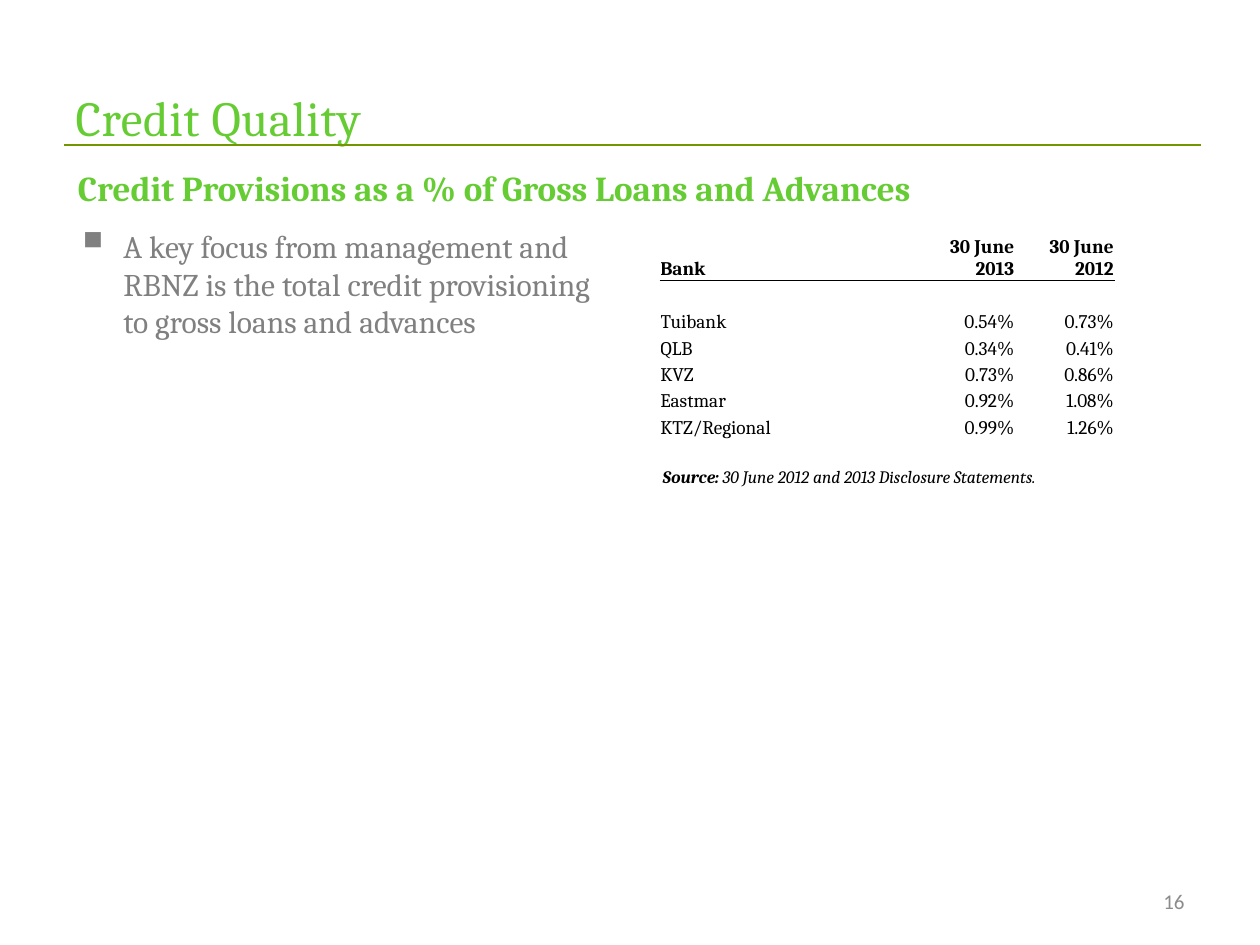
from lxml import etree
from pptx import Presentation
from pptx.dml.color import RGBColor
from pptx.enum import shapes, text
from pptx.oxml import ns, parse_xml
from pptx.util import Inches, Pt

GREEN = RGBColor(0x66, 0xCC, 0x33)
RULE_GREEN = RGBColor(0x73, 0x96, 0x00)
GREY = RGBColor(0x80, 0x80, 0x80)
NUMBER_GREY = RGBColor(0x8C, 0x8C, 0x8C)
BLACK = RGBColor(0, 0, 0)
LEFT, RIGHT = text.PP_ALIGN.LEFT, text.PP_ALIGN.RIGHT


def write(para, words, size=11, color=BLACK, font="Cambria", bold=False,
          italic=False, align=LEFT):
    """Append a formatted run to a paragraph and return it."""
    para.alignment = align
    span = para.add_run()
    span.text = words
    span.font.size = Pt(size)
    span.font.name = font
    span.font.color.rgb = color
    span.font.bold = bold
    span.font.italic = italic
    return span


def add_box(left, top, width, height, anchor=text.MSO_ANCHOR.TOP):
    """Add a wrapping text box and return its first paragraph."""
    frame = page.shapes.add_textbox(
        Inches(left), Inches(top), Inches(width), Inches(height)).text_frame
    frame.word_wrap = True
    frame.vertical_anchor = anchor
    return frame.paragraphs[0]


deck = Presentation()
deck.slide_width, deck.slide_height = Inches(10), Inches(7.5)
page = deck.slides.add_slide(deck.slide_layouts[5])

# Title and the rule beneath it
rule = page.shapes.add_connector(
    shapes.MSO_CONNECTOR.STRAIGHT,
    Inches(0.51), Inches(1.15), Inches(9.53), Inches(1.15))
rule.line.color.rgb = RULE_GREEN
rule.line.width = Pt(0.75)
etree.SubElement(rule._element.spPr, ns.qn("a:effectLst"))

title = page.shapes.title
title.left, title.top = Inches(0.5), Inches(0.3)
title.width, title.height = Inches(9), Inches(1.25)
title.text_frame.vertical_anchor = text.MSO_ANCHOR.MIDDLE
heading = write(title.text_frame.paragraphs[0], "Credit Quality", size=28, color=GREEN)
heading.font._element.set("spc", "40")

# Subtitle and key point
subtitle = add_box(0.52, 1.31, 8.19, 0.4)
subtitle.line_spacing = 0.9
write(subtitle, "Credit Provisions as a % of Gross Loans and Advances",
      size=20, color=GREEN, bold=True)

point = add_box(0.5, 1.75, 4.42, 4.95)
properties = point._p.get_or_add_pPr()
properties.set("marL", str(Inches(0.38)))
properties.set("indent", str(-Inches(0.38)))
bullet_color = etree.SubElement(properties, ns.qn("a:buClr"))
etree.SubElement(bullet_color, ns.qn("a:srgbClr"), val=str(GREY))
etree.SubElement(properties, ns.qn("a:buSzPct"), val="150000")
etree.SubElement(properties, ns.qn("a:buChar"), char="▪")
write(point, "A key focus from management and RBNZ is the total credit "
      "provisioning to gross loans and advances", size=18, color=GREY)

# Provisions table; the second row is an empty spacer
rows = [
    ("Bank", "30 June 2013", "30 June 2012"),
    ("", "", ""),
    ("Tuibank", "0.54%", "0.73%"),
    ("QLB", "0.34%", "0.41%"),
    ("KVZ", "0.73%", "0.86%"),
    ("Eastmar", "0.92%", "1.08%"),
    ("KTZ/Regional", "0.99%", "1.26%"),
]
table = page.shapes.add_table(
    len(rows), 3, Inches(5.24), Inches(1.86), Inches(3.6), Inches(1.48)).table
table.first_row = table.horz_banding = False
for column, width in zip(table.columns, (1.96, 0.85, 0.79)):
    column.width = Inches(width)
for r, values in enumerate(rows):
    table.rows[r].height = Inches(0.22 if r == 0 else 0.21)
    for c, value in enumerate(values):
        cell = table.cell(r, c)
        cell.margin_left = cell.margin_right = 0
        cell.margin_top = cell.margin_bottom = 0
        cell.vertical_anchor = text.MSO_ANCHOR.BOTTOM
        cell.fill.background()
        para = cell.text_frame.paragraphs[0]
        if value:
            write(para, value, bold=r == 0, align=RIGHT if c else LEFT)
        else:
            etree.SubElement(para._p, ns.qn("a:endParaRPr"), sz="1100")
        if r < 2:
            edge = "lnB" if r == 0 else "lnT"
            cell._tc.get_or_add_tcPr().insert(0, parse_xml(
                f'<a:{edge} {ns.nsdecls("a")} w="{Pt(1)}"><a:solidFill>'
                f'<a:srgbClr val="{BLACK}"/></a:solidFill></a:{edge}>'))

# Source note and page number
source = add_box(5.16, 3.67, 3.78, 0.47)
source.line_spacing = 0.9
write(source, "Source:", size=10, bold=True, italic=True)
write(source, " 30 June 2012 and 2013 Disclosure Statements.", size=10, italic=True)

number = add_box(7.17, 6.95, 2.33, 0.4, anchor=text.MSO_ANCHOR.MIDDLE)
write(number, "16", size=12, color=NUMBER_GREY, font="Calibri", align=RIGHT)

deck.save("out.pptx")
